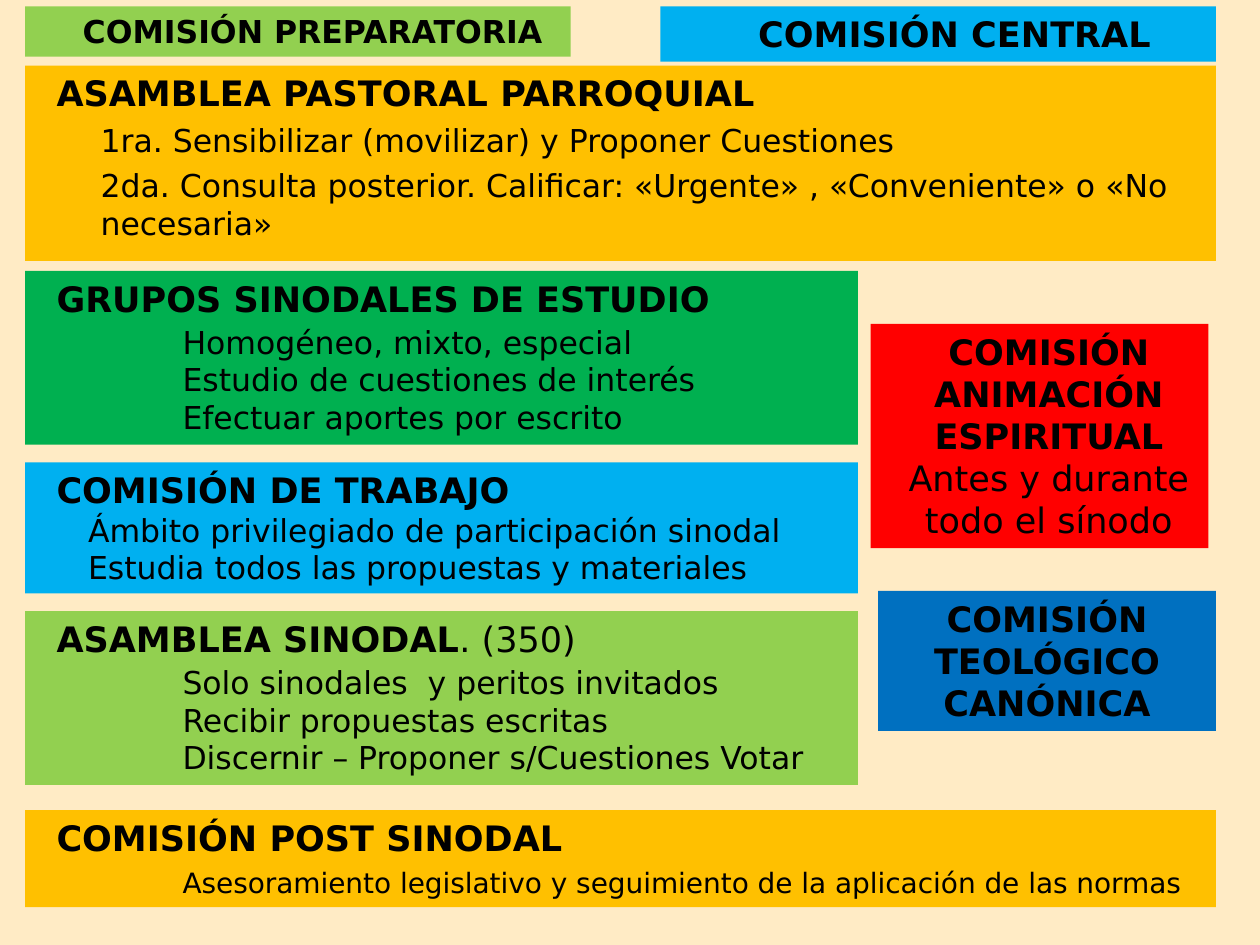
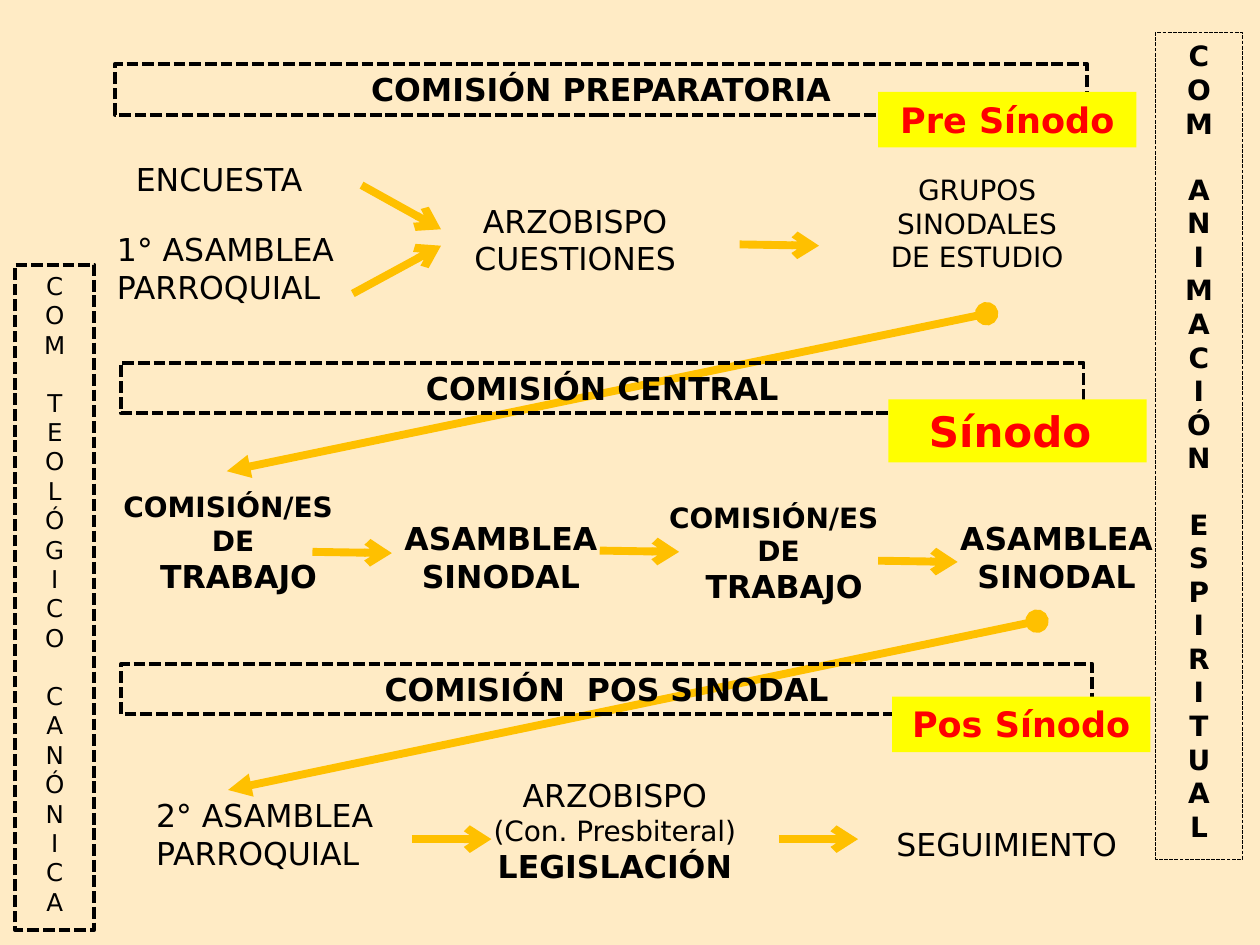
from dataclasses import dataclass

from lxml import etree
from pptx import Presentation, util as u
from pptx.dml.color import RGBColor
from pptx.enum import dml, shapes, text
from pptx.oxml.ns import qn

HUES = {
    "back": "FFEBC5", "ink": "000000", "gold": "FFC000", "green": "00B050",
    "lime": "92D050", "sky": "00B0F0", "blue": "0070C0", "red": "FF0000",
    "sun": "FFFF00",
}
FONT = "DejaVu Sans"
COLS, ROWS = 100, 75
WIDE, HIGH = u.Inches(10), u.Inches(7.5)
LEFT, MID = text.PP_ALIGN.LEFT, text.PP_ALIGN.CENTER
STEP = 6.3  # columns spanned by a flow arrow


@dataclass
class Line:
    """A paragraph; indent is in columns, gap is the space before in points."""
    words: str
    size: float = 18
    bold: bool = False
    indent: float = 0
    gap: float = 0
    tail: str = ""


def col(n):
    return round(WIDE * n / COLS)


def row(n):
    return round(HIGH * n / ROWS)


def hue(name):
    return RGBColor.from_string(HUES[name])


def shift(box, x, y):
    return box[0] + x, box[1] + y


def write(shape, lines, align=LEFT, ink="ink"):
    frame = shape.text_frame
    frame.word_wrap = True
    frame.vertical_anchor = text.MSO_ANCHOR.TOP
    for i, line in enumerate(lines):
        para = frame.add_paragraph() if i else frame.paragraphs[0]
        para.alignment = align
        para.space_before = u.Pt(line.gap)
        font = para.font
        font.name, font.size, font.bold = FONT, u.Pt(line.size), line.bold
        font.color.rgb = hue(ink)
        para.add_run().text = line.words
        if line.tail:
            rest = para.add_run()
            rest.text, rest.font.bold = line.tail, False
        if line.indent:
            props = para._p.get_or_add_pPr()
            props.set("marL", str(col(line.indent)))
            props.set("indent", "0")


def block(slide, box, lines, fill=None, align=MID, ink="ink", dash=0):
    """Draw a box of text; dash is the outline width, 0 for none."""
    x, y, w, h = box
    shape = slide.shapes.add_shape(
        shapes.MSO_SHAPE.RECTANGLE, col(x), row(y), col(w), row(h))
    shape.shadow.inherit = False
    if fill:
        shape.fill.solid()
        shape.fill.fore_color.rgb = hue(fill)
    else:
        shape.fill.background()
    if dash:
        shape.line.color.rgb = hue("ink")
        shape.line.width = u.Pt(dash)
        shape.line.dash_style = dml.MSO_LINE.SQUARE_DOT
    else:
        shape.line.fill.background()
    write(shape, lines, align, ink)
    return shape


def arrow(slide, start, end, head=None, tail="arrow"):
    wire = slide.shapes.add_connector(
        shapes.MSO_CONNECTOR.STRAIGHT,
        col(start[0]), row(start[1]), col(end[0]), row(end[1]))
    wire.line.color.rgb = hue("gold")
    wire.line.width = u.Pt(4.5)
    stroke = wire.line._get_or_add_ln()
    for tag, kind in (("a:headEnd", head), ("a:tailEnd", tail)):
        if kind:
            etree.SubElement(stroke, qn(tag)).set("type", kind)
    etree.SubElement(wire._element.spPr, qn("a:effectLst"))


def link(slide, start, end):
    arrow(slide, start, end, "oval", "triangle")


def panel(slide, box, fill, title, notes, indent, gap=0, lead=0,
          size=18, tail=""):
    """Heading with indented notes; lead is the gap under the heading."""
    lines = [Line(title, 20, True, 1.5, tail=tail)]
    lines += [Line(note, size, False, indent, gap if i else lead)
              for i, note in enumerate(notes)]
    block(slide, box, lines, fill, LEFT)


def badge(slide, box, fill, title, size, inset):
    shape = block(slide, box, [Line(title, size, True)], fill)
    shape.text_frame.margin_left = col(1 + inset)


def tower(slide, box, words, size, bold, dash):
    """Words set one letter a line, with one empty line's height between."""
    lines = [Line(letter, size, bold, gap=1.164 * size if n and not i else 0)
             for n, word in enumerate(words.split())
             for i, letter in enumerate(word)]
    block(slide, box, lines, dash=dash)


def phase(slide, box, title, flag, steps, arrows):
    """Dashed band with a flag; steps and arrows lie relative to the box."""
    for place, align, lines in steps:
        block(slide, (*shift(box, *place[:2]), *place[2:]), lines, align=align)
    for x, y, dx, dy in arrows:
        arrow(slide, shift(box, x, y), shift(box, x + dx, y + dy))
    block(slide, box, [Line(title, 18, True)], dash=2.25)
    place, name, size = flag
    block(slide, (*shift(box, *place[:2]), 20.5, place[2]),
          [Line(name, size, True)], "sun", ink="red")


def blank(deck):
    slide = deck.slides.add_slide(deck.slide_layouts[6])
    slide.background.fill.solid()
    slide.background.fill.fore_color.rgb = hue("back")
    return slide


def bodies(deck):
    slide = blank(deck)
    x, full, part = 2, 94.5, 66.1
    panel(slide, (x, 5.2, full, 15.5), "gold", "ASAMBLEA PASTORAL PARROQUIAL",
          ["1ra. Sensibilizar (movilizar) y Proponer Cuestiones",
           "2da. Consulta posterior. Calificar: «Urgente» , «Conveniente» "
           "o «No necesaria»"], 5, 4.2, 4.2)
    panel(slide, (x, 21.5, part, 13.8), "green", "GRUPOS SINODALES DE ESTUDIO",
          ["Homogéneo, mixto, especial", "Estudio de cuestiones de interés",
           "Efectuar aportes por escrito"], 11.5, lead=2)
    panel(slide, (x, 36.7, part, 10.4), "sky", "COMISIÓN DE TRABAJO",
          ["Ámbito privilegiado de participación sinodal",
           "Estudia todos las propuestas y materiales"], 4)
    block(slide, (69.1, 25.7, 26.8, 17.8),
          [Line("COMISIÓN ANIMACIÓN ESPIRITUAL", 20, True, 1.5),
           Line("Antes y durante todo el sínodo", 20, False, 1.5)], "red")
    panel(slide, (x, 48.5, part, 13.8), "lime", "ASAMBLEA SINODAL",
          ["Solo sinodales  y peritos invitados", "Recibir propuestas escritas",
           "Discernir – Proponer s/Cuestiones Votar"], 11.5, lead=2,
          tail=". (350)")
    panel(slide, (x, 64.3, full, 7.7), "gold", "COMISIÓN POST SINODAL",
          ["Asesoramiento legislativo y seguimiento de la aplicación "
           "de las normas"], 11.5, lead=4, size=16)
    badge(slide, (x, 0.5, 43.3, 4), "lime", "COMISIÓN PREPARATORIA", 18, 2.3)
    badge(slide, (52.4, 0.5, 44.1, 4.4), "sky", "COMISIÓN CENTRAL", 20, 2.6)
    block(slide, (69.7, 46.9, 26.8, 11.1),
          [Line(word, 20, True) for word in
           ("COMISIÓN", "TEOLÓGICO", "CANÓNICA")], "blue")


def stages(deck):
    slide = blank(deck)
    link(slide, (78.3, 24.9), (18, 37.4))
    link(slide, (82.3, 49.3), (18.1, 62.7))
    team = [Line("COMISIÓN/ES ", 16, True), Line("DE", 16, True),
            Line(" TRABAJO", 18, True)]
    synod = [Line("ASAMBLEA SINODAL", 18, True)]
    phase(slide, (9.1, 5.1, 77.2, 4), "COMISIÓN PREPARATORIA",
          ((60.6, 2.2, 4.4), "Pre Sínodo", 20),
          [((0.7, 7.1, 16.5, 4), LEFT, [Line("ENCUESTA")]),
           ((-0.8, 12.7, 20.5, 7.1), LEFT, [Line("1° ASAMBLEA PARROQUIAL")]),
           ((26.7, 10.4, 19.7, 7.1), MID,
            [Line("ARZOBISPO"), Line("CUESTIONES")]),
           ((59.8, 8.1, 17.3, 9.1), MID,
            [Line("GRUPOS SINODALES DE ESTUDIO", 16)])],
          [(19.6, 9.6, STEP, 3.5), (18.9, 18.2, 7, -3.8),
           (49.6, 14.3, STEP, 0.1)])
    phase(slide, (9.6, 28.8, 76.4, 4), "COMISIÓN CENTRAL",
          ((60.9, 2.9, 5), "Sínodo ", 24),
          [((-2.1, 9.6, 22, 9.4), MID, team),
           ((20.7, 11.9, 18.9, 7.1), MID, synod),
           ((41.2, 10.4, 22, 9.4), MID, team),
           ((64.8, 11.9, 18.9, 7.1), MID, synod)],
          [(x, y, STEP, 0.1) for x, y in
           ((15.2, 15), (38, 14.9), (60.1, 15.7))])
    phase(slide, (9.6, 52.7, 77.1, 4), "COMISIÓN  POS SINODAL",
          ((61.2, 2.6, 4.4), "Pos Sínodo", 20),
          [((1.8, 10, 20.5, 7.1), LEFT, [Line("2° ASAMBLEA PARROQUIAL")]),
           ((27.8, 8.4, 22.8, 10.1), MID,
            [Line("ARZOBISPO"), Line("(Con. Presbiteral)", 16),
             Line("LEGISLACIÓN", 18, True)]),
           ((59.3, 12.3, 22, 4), MID, [Line("SEGUIMIENTO")])],
          [(x, 13.9, STEP, 0) for x in (23.1, 52.2)])
    tower(slide, (91.7, 2.6, 6.9, 65.6), "COM ANIMACIÓN ESPIRITUAL",
          16, True, 0.75)
    tower(slide, (1.2, 21, 6.3, 52.8), "COM TEOLÓGICO CANÓNICA",
          14, False, 2.25)


def main():
    deck = Presentation()
    deck.slide_width, deck.slide_height = WIDE, HIGH
    bodies(deck)
    stages(deck)
    deck.save("out.pptx")


if __name__ == "__main__":
    main()
